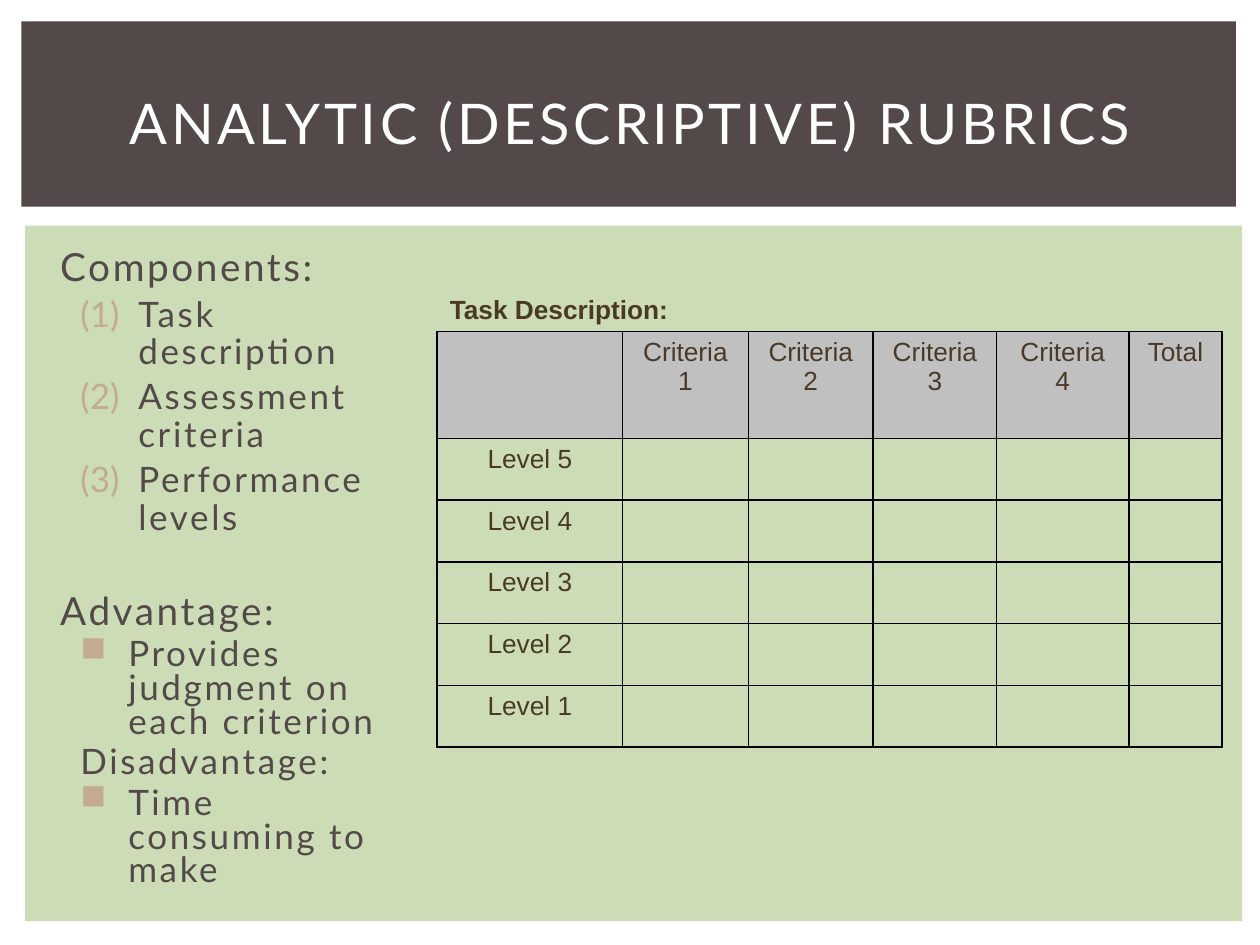
"""Build a slide on analytic rubrics with a sample scoring grid."""
import pptx
import pptx.dml.color
import pptx.enum.shapes
import pptx.enum.text
import pptx.oxml
import pptx.oxml.ns
import pptx.util
import lxml.etree

Inches, Pt, qn = pptx.util.Inches, pptx.util.Pt, pptx.oxml.ns.qn
ALIGN, ANCHOR = pptx.enum.text.PP_ALIGN, pptx.enum.text.MSO_ANCHOR
BROWN, TAN, GREEN, GREY, INK = "534949", "C4AB8F", "CBDCB6", "C0C0C0", "4A3927"


def color(value):
    return pptx.dml.color.RGBColor.from_string(value)


def style(para, size, name, value, spacing=0):
    para.font.size = Pt(size)
    para.font.name = name
    para.font.color.rgb = color(value)
    para._p.pPr.find(qn("a:defRPr")).set("spc", str(spacing))


deck = pptx.Presentation()
deck.slide_width, deck.slide_height = Inches(10), Inches(7.5)
page = deck.slides.add_slide(deck.slide_layouts[6])

panels = [(0.2, 1.79, 9.66, 5.52, GREEN), (0.17, 0.17, 9.64, 1.47, BROWN)]
for left, top, width, height, value in panels:
    panel = page.shapes.add_shape(
        pptx.enum.shapes.MSO_SHAPE.RECTANGLE,
        Inches(left), Inches(top), Inches(width), Inches(height))
    panel.shadow.inherit = False
    panel.fill.solid()
    panel.fill.fore_color.rgb = color(value)
    panel.line.fill.background()

title = page.shapes.add_textbox(Inches(0.42), Inches(0.39), Inches(9.17), Inches(1.15))
title.text_frame.word_wrap = True
title.text_frame.vertical_anchor = ANCHOR.MIDDLE
para = title.text_frame.paragraphs[0]
para.text = "ANALYTIC (DESCRIPTIVE) RUBRICS"
para.alignment = ALIGN.CENTER
style(para, 32, "Lato", "FFFFFF", 200)

levels = {
    "heading": (0.54, -0.54, 22.1, None, {}),
    "number": (0.62, -0.46, 20, "a:buAutoNum", {"type": "arabicParenBoth"}),
    "bullet": (0.54, -0.38, 20, "a:buChar", {"char": "■"}),
    "subheading": (0.16, 0, 20, None, {}),
}
notes = [
    (1.92, 2.82, 0.9, [
        ("heading", "Components:"),
        ("number", "Task description"),
        ("number", "Assessment criteria"),
        ("number", "Performance levels")]),
    (4.68, 2.41, 0.8, [
        ("heading", "Advantage:"),
        ("bullet", "Provides judgment on each criterion"),
        ("subheading", "Disadvantage:"),
        ("bullet", "Time consuming to make")]),
]
for top, height, line_spacing, lines in notes:
    box = page.shapes.add_textbox(Inches(0.38), Inches(top), Inches(3), Inches(height))
    frame = box.text_frame
    frame.word_wrap = True
    for index, (level, text) in enumerate(lines):
        margin, indent, size, marker, settings = levels[level]
        para = frame.add_paragraph() if index else frame.paragraphs[0]
        para.text = text
        para.line_spacing = line_spacing
        para.space_before = Pt(4)
        properties = para._p.get_or_add_pPr()
        properties.set("marL", str(Inches(margin)))
        properties.set("indent", str(Inches(indent)))
        if marker:
            tint = lxml.etree.SubElement(properties, qn("a:buClr"))
            lxml.etree.SubElement(tint, qn("a:srgbClr"), val=TAN)
            lxml.etree.SubElement(properties, qn(marker), **settings)
        style(para, size, "Lato", BROWN, 150)

columns = [1.47, 1, 0.99, 0.98, 1.05, 0.74]
rows = [0.67, 0.85] + [0.49] * 5
texts = [
    ["Task Description:"],
    ["", "Criteria 1", "Criteria 2", "Criteria 3", "Criteria\n4", "Total"],
] + [[f"Level {number}"] for number in range(5, 0, -1)]
grid = page.shapes.add_table(
    len(rows), len(columns), Inches(3.47), Inches(1.96),
    Inches(sum(columns)), Inches(sum(rows))).table
grid.first_row = grid.horz_banding = False
no_style = "{2D5ABB26-0587-4C30-8999-92F81FD0307C}"
grid._tbl.tblPr.find(qn("a:tableStyleId")).text = no_style
for column, width in zip(grid.columns, columns):
    column.width = Inches(width)
for row_index, height in enumerate(rows):
    grid.rows[row_index].height = Inches(height)
    for column_index in range(len(columns)):
        cell = grid.cell(row_index, column_index)
        for side in ("LRTB" if row_index else "B"):
            border = lxml.etree.SubElement(
                cell._tc.get_or_add_tcPr(), qn(f"a:ln{side}"), w=str(Pt(1)))
            paint = lxml.etree.SubElement(border, qn("a:solidFill"))
            lxml.etree.SubElement(paint, qn("a:srgbClr"), val="000000")
        if row_index == 1:
            cell.fill.solid()
            cell.fill.fore_color.rgb = color(GREY)
        else:
            cell.fill.background()
        if column_index < len(texts[row_index]):
            cell.text = texts[row_index][column_index]
            for para in cell.text_frame.paragraphs:
                para.alignment = ALIGN.CENTER if row_index else ALIGN.LEFT
                style(para, 15, "Arial", INK)
                para.font.bold = row_index == 0
caption = grid.cell(0, 0)
caption.merge(grid.cell(0, 1))
caption.vertical_anchor = ANCHOR.BOTTOM

deck.save("out.pptx")
